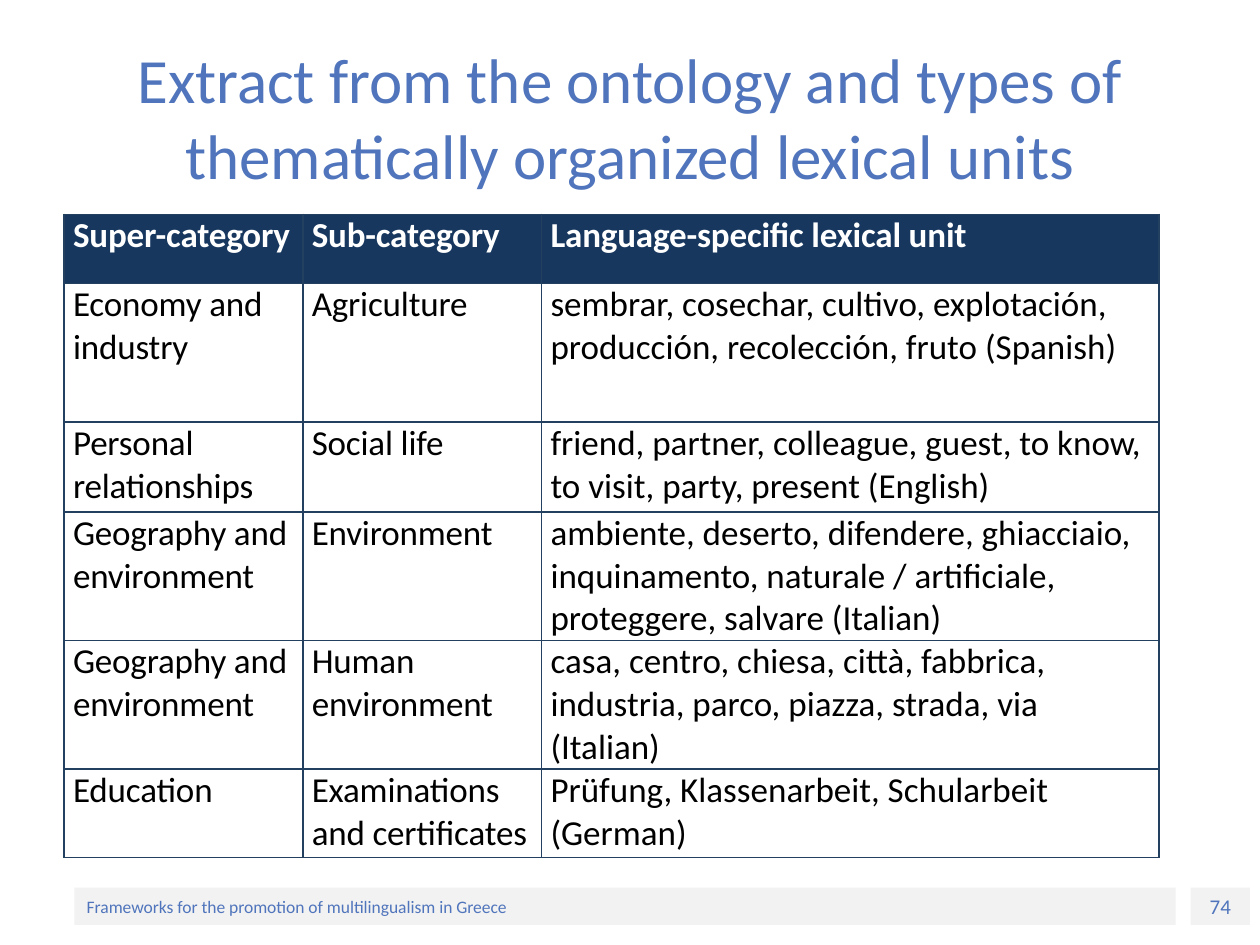
"""Build a slide with a table of thematically organized lexical units."""
from dataclasses import dataclass

from lxml import etree
from pptx import Presentation
from pptx.dml.color import RGBColor
from pptx.enum.shapes import MSO_SHAPE
from pptx.enum.text import MSO_ANCHOR, PP_ALIGN
from pptx.oxml.ns import qn
from pptx.util import Inches, Pt

RECTANGLE = MSO_SHAPE.RECTANGLE
MIDDLE = MSO_ANCHOR.MIDDLE
LEFT, CENTER = PP_ALIGN.LEFT, PP_ALIGN.CENTER
TITLE_ONLY = 5
SLIDE_WIDTH, SLIDE_HEIGHT = Inches(10), Inches(7.5)


@dataclass(frozen=True)
class Theme:
    """Colours, font and type sizes of the slide."""

    font: str = "Calibri"
    accent: str = "5075BC"
    band: str = "F2F2F2"
    header: str = "17375E"
    border: str = "244061"
    white: str = "FFFFFF"
    black: str = "000000"
    title_size: int = 36
    table_size: int = 20
    number_size: int = 12
    footer_size: int = 10


THEME = Theme()
TITLE = "Extract from the ontology and types of thematically organized lexical units"
FOOTER = "Frameworks for the promotion of multilingualism in Greece"
PAGE_NUMBER = "74"
COLUMN_SHARES = (18.95, 18.95, 49)
ROW_SHARES = (7.33, 14.67, 9.5, 13.6, 13.6, 9.33)
LEXICAL_UNITS = (
    ("Super-category", "Sub-category", "Language-specific lexical unit"),
    ("Economy and industry", "Agriculture",
     "sembrar, cosechar, cultivo, explotación, producción, recolección, fruto (Spanish)"),
    ("Personal relationships", "Social life",
     "friend, partner, colleague, guest, to know, to visit, party, present (English)"),
    ("Geography and environment", "Environment",
     "ambiente, deserto, difendere, ghiacciaio, inquinamento, naturale / artificiale, "
     "proteggere, salvare (Italian)"),
    ("Geography and environment", "Human environment",
     "casa, centro, chiesa, città, fabbrica, industria, parco, piazza, strada, via (Italian)"),
    ("Education", "Examinations and certificates",
     "Prüfung, Klassenarbeit, Schularbeit (German)"),
)


def across(share):
    """Return a percentage of the slide's width."""
    return round(SLIDE_WIDTH * share / 100)


def down(share):
    """Return a percentage of the slide's height."""
    return round(SLIDE_HEIGHT * share / 100)


def area(left, top, width, height):
    """Turn percentages of the slide into a position and size."""
    return across(left), down(top), across(width), down(height)


def write(frame, wording, size, color, align=LEFT, bold=False):
    """Put one formatted run into the first paragraph and return it."""
    paragraph = frame.paragraphs[0]
    paragraph.alignment = align
    run = paragraph.add_run()
    run.text = wording
    run.font.name = THEME.font
    run.font.size = Pt(size)
    run.font.bold = bold
    run.font.color.rgb = RGBColor.from_string(color)
    return run


def add_title(slide):
    """Place and fill the title placeholder."""
    title = slide.shapes.title
    title.left, title.top, title.width, title.height = area(5, 4, 90, 16.67)
    title.text_frame.word_wrap = True
    title.text_frame.vertical_anchor = MIDDLE
    write(title.text_frame, TITLE, THEME.title_size, THEME.accent, CENTER)


def add_footer_band(slide, place, wording, size, align):
    """Add a pale band with a line of text."""
    band = slide.shapes.add_shape(RECTANGLE, *place)
    band.shadow.inherit = False
    band.fill.solid()
    band.fill.fore_color.rgb = RGBColor.from_string(THEME.band)
    band.line.fill.background()
    band.text_frame.word_wrap = True
    band.text_frame.vertical_anchor = MIDDLE
    write(band.text_frame, wording, size, THEME.accent, align)


def outline_cell(cell):
    """Draw thin borders on all four sides of a cell."""
    properties = cell._tc.get_or_add_tcPr()
    for position, side in enumerate(("a:lnL", "a:lnR", "a:lnT", "a:lnB")):
        border = etree.Element(qn(side), w=str(Pt(1)))
        fill = etree.SubElement(border, qn("a:solidFill"))
        etree.SubElement(fill, qn("a:srgbClr"), val=THEME.border)
        properties.insert(position, border)


def fill_cell(cell, wording, is_header, is_tight):
    """Write and colour one table cell."""
    cell.margin_left = cell.margin_right = Inches(0.07)
    cell.margin_top = cell.margin_bottom = 0
    cell.fill.solid()
    cell.fill.fore_color.rgb = RGBColor.from_string(THEME.header if is_header else THEME.white)
    color = THEME.white if is_header else THEME.black
    run = write(cell.text_frame, wording, THEME.table_size, color, bold=is_header)
    if is_tight:
        run.font._element.set("spc", "-10")
    outline_cell(cell)


def add_lexical_table(slide):
    """Add the table of categories and lexical units."""
    place = area(5.1, 22.67, sum(COLUMN_SHARES), sum(ROW_SHARES))
    table = slide.shapes.add_table(len(ROW_SHARES), len(COLUMN_SHARES), *place).table
    table.horz_banding = False
    for column, share in zip(table.columns, COLUMN_SHARES):
        column.width = across(share)
    for row, share in zip(table.rows, ROW_SHARES):
        row.height = down(share)
    for row_index, entry in enumerate(LEXICAL_UNITS):
        for column_index, wording in enumerate(entry):
            is_header = row_index == 0
            is_tight = is_header or column_index < 2
            fill_cell(table.cell(row_index, column_index), wording, is_header, is_tight)


def main():
    """Build and save the slide."""
    deck = Presentation()
    deck.slide_width, deck.slide_height = SLIDE_WIDTH, SLIDE_HEIGHT
    slide = deck.slides.add_slide(deck.slide_layouts[TITLE_ONLY])
    add_footer_band(slide, area(94.5, 93.93, 4.7, 3.93), PAGE_NUMBER, THEME.number_size, CENTER)
    add_footer_band(slide, area(5.9, 93.93, 87.4, 3.93), FOOTER, THEME.footer_size, LEFT)
    add_title(slide)
    add_lexical_table(slide)
    deck.save("out.pptx")


if __name__ == "__main__":
    main()
